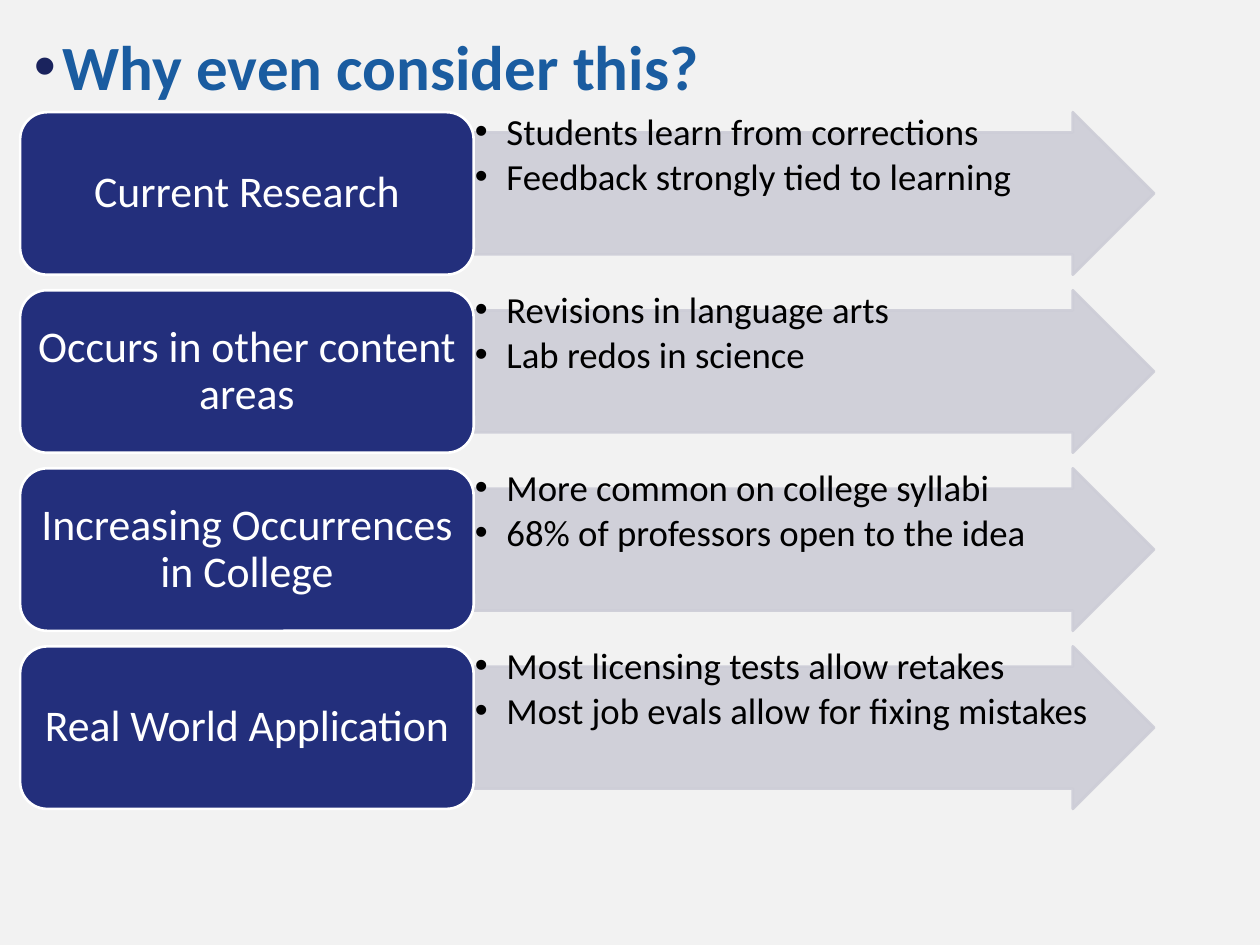
from dataclasses import dataclass

from lxml import etree
from pptx import Presentation
from pptx.dml.color import RGBColor
from pptx.enum.shapes import MSO_SHAPE
from pptx.enum.text import MSO_ANCHOR, PP_ALIGN
from pptx.oxml.ns import qn
from pptx.util import Inches, Pt

ARROW, ROUNDED = MSO_SHAPE.RIGHT_ARROW, MSO_SHAPE.ROUNDED_RECTANGLE
TOP, MIDDLE = MSO_ANCHOR.TOP, MSO_ANCHOR.MIDDLE
LEFT, CENTER = PP_ALIGN.LEFT, PP_ALIGN.CENTER


@dataclass(frozen=True)
class Theme:
    font: str = "Calibri"
    background: str = "F2F2F2"
    title: str = "1A5CA0"
    title_bullet: str = "1A235D"
    label_fill: str = "232F7C"
    label_text: str = "FFFFFF"
    arrow: str = "CDCDD7"
    detail_text: str = "000000"
    arrow_opacity: int = 90
    title_size: int = 36
    label_size: int = 25
    detail_size: int = 21
    line_width: float = 1.5


THEME = Theme()

# Row grid, in inches
LABEL_LEFT, LABEL_WIDTH = 0.16, 3.6
ARROW_LEFT, ARROW_WIDTH = LABEL_LEFT + LABEL_WIDTH, 5.4
FIRST_TOP, LAST_TOP, ROW_HEIGHT = 0.89, 5.13, 1.29

ROWS = [
    ("Current Research",
     ["Students learn from corrections", "Feedback strongly tied to learning"]),
    ("Occurs in other content areas",
     ["Revisions in language arts", "Lab redos in science"]),
    ("Increasing Occurrences in College",
     ["More common on college syllabi", "68% of professors open to the idea"]),
    ("Real World Application",
     ["Most licensing tests allow retakes",
      "Most job evals allow for fixing mistakes"]),
]


def add_bullet(para, indent, color):
    """Give the paragraph a hanging round bullet."""
    properties = para._p.get_or_add_pPr()
    properties.set("marL", str(Inches(indent)))
    properties.set("indent", str(-Inches(indent)))
    bullet_color = etree.SubElement(properties, qn("a:buClr"))
    etree.SubElement(bullet_color, qn("a:srgbClr"), val=color)
    etree.SubElement(properties, qn("a:buFont"), typeface="Arial")
    etree.SubElement(properties, qn("a:buChar"), char="•")


def write_text(shape, lines, *, size, color, bold=False, align=LEFT, anchor=TOP,
               insets=(0.1, 0.05), spacing=None, after=0, indent=0,
               bullet_color=None):
    """Fill a shape with one paragraph per line; insets are (sides, ends)."""
    frame = shape.text_frame
    frame.word_wrap = True
    frame.vertical_anchor = anchor
    frame.margin_left = frame.margin_right = Inches(insets[0])
    frame.margin_top = frame.margin_bottom = Inches(insets[1])
    for number, line in enumerate(lines):
        para = frame.add_paragraph() if number else frame.paragraphs[0]
        para.alignment = align
        para.line_spacing = spacing
        para.space_after = Pt(after)
        if bullet_color:
            add_bullet(para, indent, bullet_color)
        span = para.add_run()
        span.text = line
        span.font.name = THEME.font
        span.font.size = Pt(size)
        span.font.bold = bold
        span.font.color.rgb = RGBColor.from_string(color)


def add_box(page, left, top, width, height):
    return page.shapes.add_textbox(
        Inches(left), Inches(top), Inches(width), Inches(height))


def add_block(page, kind, left, top, width, height, fill, line, opacity=100):
    """Add a filled, outlined preset shape."""
    block = page.shapes.add_shape(
        kind, Inches(left), Inches(top), Inches(width), Inches(height))
    block.shadow.inherit = False
    block.fill.solid()
    block.fill.fore_color.rgb = RGBColor.from_string(fill)
    block.line.color.rgb = RGBColor.from_string(line)
    block.line.width = Pt(THEME.line_width)
    if opacity < 100:
        for color in block._element.spPr.iter(qn("a:srgbClr")):
            etree.SubElement(color, qn("a:alpha"), val=str(opacity * 1000))
    return block


def add_row(page, top, label, details):
    # Arrow with its bulleted details
    arrow_place = (ARROW_LEFT, top, ARROW_WIDTH, ROW_HEIGHT)
    arrow = add_block(page, ARROW, *arrow_place, THEME.arrow, THEME.arrow,
                      THEME.arrow_opacity)
    arrow.adjustments[0] = 0.75
    arrow.adjustments[1] = 0.5
    write_text(add_box(page, *arrow_place), details,
               size=THEME.detail_size, color=THEME.detail_text,
               insets=(0.01, 0.01), spacing=0.9, after=3,
               indent=0.25, bullet_color=THEME.detail_text)

    # Rounded label
    block = add_block(page, ROUNDED, LABEL_LEFT, top, LABEL_WIDTH, ROW_HEIGHT,
                      THEME.label_fill, THEME.label_text)
    write_text(block, [label], size=THEME.label_size, color=THEME.label_text,
               align=CENTER, anchor=MIDDLE, insets=(0.03, 0.03), spacing=0.9)


def main():
    deck = Presentation()
    deck.slide_width, deck.slide_height = Inches(10), Inches(7.5)
    page = deck.slides.add_slide(deck.slide_layouts[6])
    page.background.fill.solid()
    page.background.fill.fore_color.rgb = RGBColor.from_string(THEME.background)

    # Title
    write_text(add_box(page, 0.17, 0.17, 9, 0.7), ["Why even consider this?"],
               size=THEME.title_size, color=THEME.title, bold=True,
               anchor=MIDDLE, indent=0.23, bullet_color=THEME.title_bullet)

    # Evenly spaced rows
    pitch = (LAST_TOP - FIRST_TOP) / (len(ROWS) - 1)
    for number, (label, details) in enumerate(ROWS):
        add_row(page, FIRST_TOP + number * pitch, label, details)

    deck.save("out.pptx")


if __name__ == "__main__":
    main()
